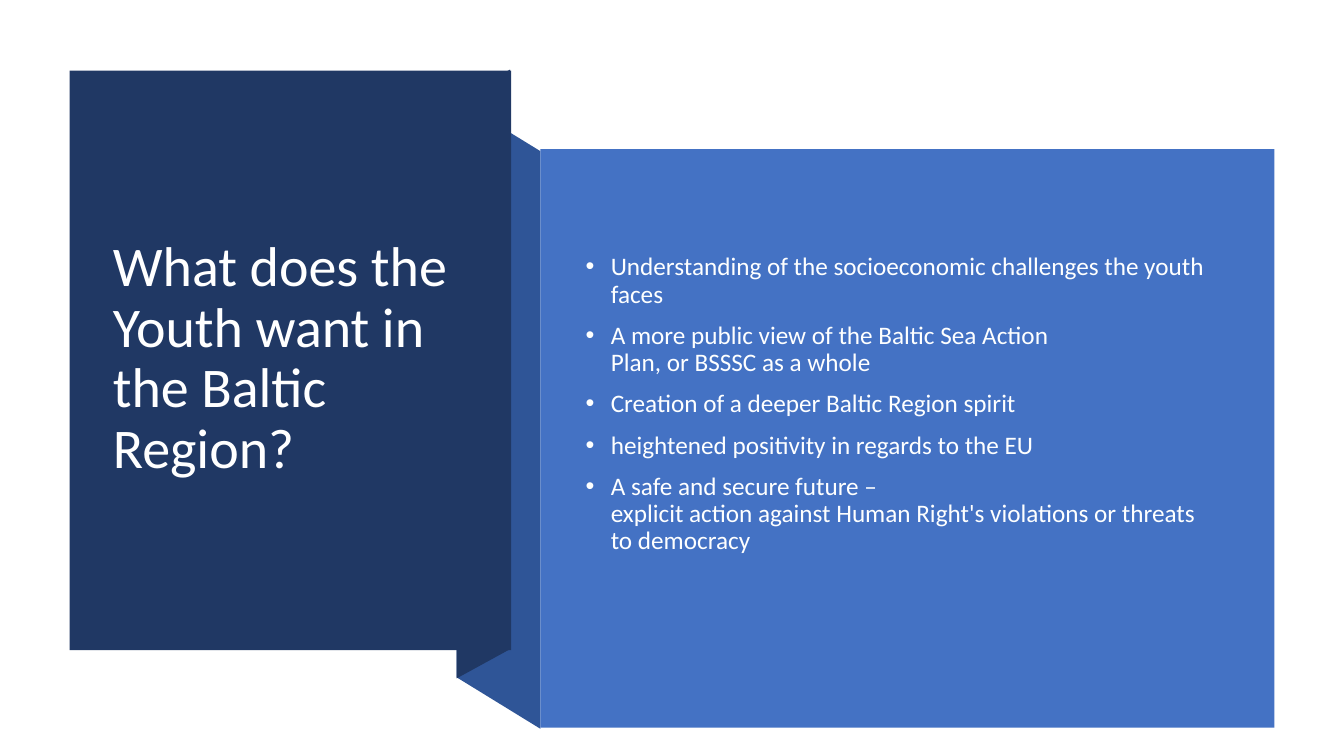
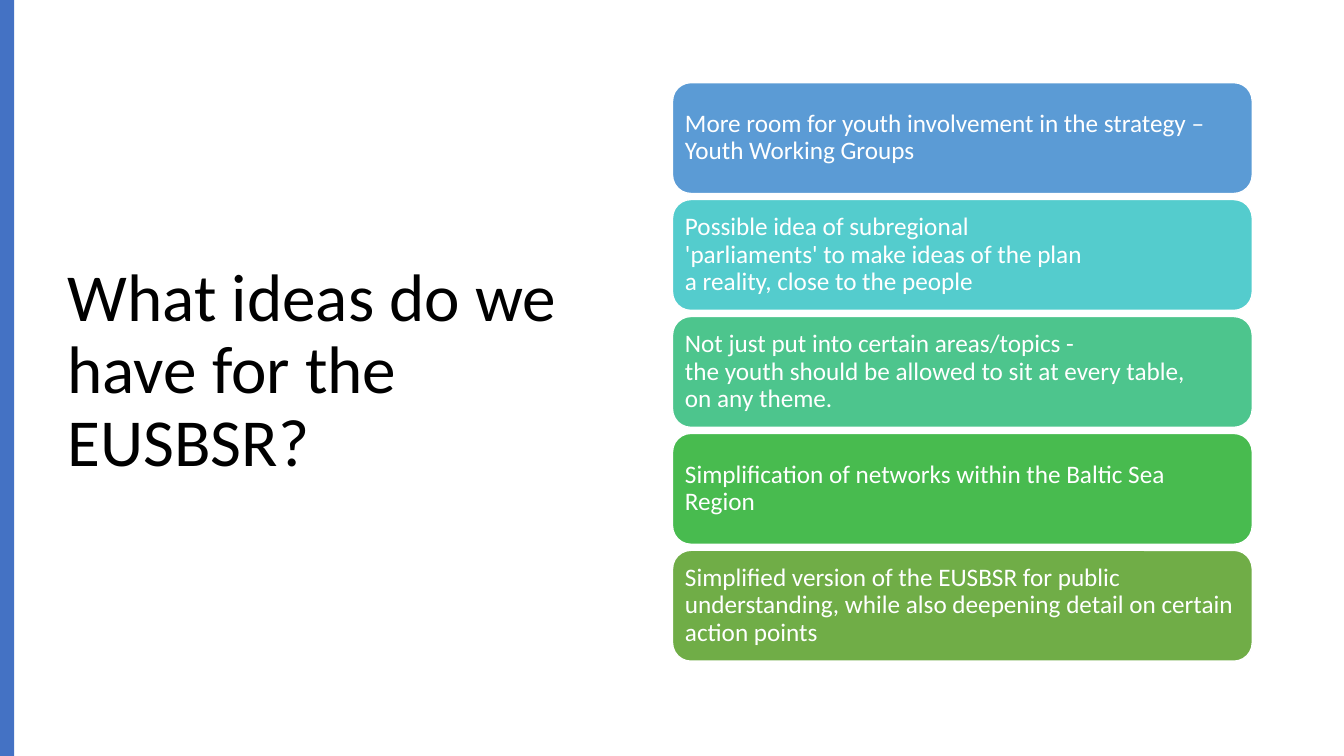
from dataclasses import dataclass
from typing import NamedTuple

from lxml.etree import SubElement
from pptx import Presentation
from pptx.dml.color import RGBColor as Rgb
from pptx.enum.shapes import MSO_SHAPE as Kind
from pptx.enum.text import MSO_ANCHOR as Anchor, MSO_AUTO_SIZE as Fit, PP_ALIGN as Align
from pptx.oxml.ns import qn
from pptx.shapes.autoshape import Shape
from pptx.slide import Slide
from pptx.text.text import TextFrame
from pptx.util import Inches, Pt


@dataclass(frozen=True)
class Theme:
    font: str = "Calibri"
    white: str = "FFFFFF"
    pale: str = "FEFFFF"
    black: str = "000000"
    navy: str = "203864"
    fold: str = "2F5597"
    blue: str = "4472C4"
    body: int = 18
    head: int = 40
    large: int = 48
    lead: float = 0.9


class Box(NamedTuple):
    left: float
    top: float
    width: float
    height: float


class Card(NamedTuple):
    fill: str
    text: str


THEME = Theme()

WANTS = [
    "Understanding of the socioeconomic challenges the youth faces",
    "A more public view of the Baltic Sea Action\nPlan, or BSSSC as a whole",
    "Creation of a deeper Baltic Region spirit",
    "heightened positivity in regards to the EU",
    "A safe and secure future –\nexplicit action against Human Right's violations or threats to democracy",
]

CARDS = [
    Card("5B9BD5", "More room for youth involvement in the strategy –\nYouth Working Groups"),
    Card("54CCCD", "Possible idea of subregional\n'parliaments' to make ideas of the plan\n"
                   "a reality, close to the people"),
    Card("4DC58D", "Not just put into certain areas/topics -\n"
                   "the youth should be allowed to sit at every table,\non any theme."),
    Card("48BB4F", "Simplification of networks within the Baltic Sea Region"),
    Card("70AD47", "Simplified version of the EUSBSR for public understanding, "
                   "while also deepening detail on certain action points"),
]


def write(frame: TextFrame, *texts: str, size: int = THEME.body, color: str = THEME.white,
          gap: int = 0, bullet: bool = False, inset: float = 0.1) -> None:
    """Fill a frame with one paragraph per text; a newline breaks the line."""
    frame.word_wrap = True
    frame.auto_size = Fit.NONE
    frame.vertical_anchor = Anchor.MIDDLE
    frame.margin_left = frame.margin_right = Inches(inset)
    frame.margin_top = frame.margin_bottom = Inches(0.05)
    for i, text in enumerate(texts):
        para = frame.add_paragraph() if i else frame.paragraphs[0]
        para.text = text
        para.alignment = Align.LEFT
        para.line_spacing = THEME.lead
        para.space_before = Pt(gap)
        for run in para.runs:
            run.font.name = THEME.font
            run.font.size = Pt(size)
            run.font.color.rgb = Rgb.from_string(color)
        if bullet:
            add_bullet(para._p.get_or_add_pPr())


def add_bullet(props) -> None:
    props.set("marL", str(Inches(0.25)))
    props.set("indent", str(-Inches(0.25)))
    SubElement(props, qn("a:buFont"), typeface="Arial")
    SubElement(props, qn("a:buChar"), char="•")


def paint(shape: Shape, fill: str, line: str = "") -> Shape:
    shape.shadow.inherit = False
    shape.fill.solid()
    shape.fill.fore_color.rgb = Rgb.from_string(fill)
    if line:
        shape.line.color.rgb = Rgb.from_string(line)
        shape.line.width = Pt(1)
    else:
        shape.line.fill.background()
    return shape


def add_box(slide: Slide, box: Box, fill: str, line: str = "",
            kind: Kind = Kind.RECTANGLE) -> Shape:
    return paint(slide.shapes.add_shape(kind, *map(Inches, box)), fill, line)


def add_fold(slide: Slide, points: list[tuple[float, float]], fill: str) -> None:
    first, *rest = [(Inches(x), Inches(y)) for x, y in points]
    pen = slide.shapes.build_freeform(*first)
    pen.add_line_segments(rest, close=True)
    paint(pen.convert_to_shape(), fill)


def set_title(slide: Slide, text: str, box: Box, size: int, color: str) -> None:
    """Place the title above all shapes drawn so far."""
    title = slide.shapes.title
    title.left, title.top, title.width, title.height = map(Inches, box)
    write(title.text_frame, text, size=size, color=color)
    slide.shapes.element.append(title.element)


def build_wants(slide: Slide) -> None:
    add_fold(slide, [(5.36, 7.23), (4.53, 6.72), (4.53, 0.99), (5.36, 1.5)], THEME.fold)
    add_fold(slide, [(5.06, 6.44), (4.53, 6.73), (4.53, 0.98), (5.06, 0.69)], THEME.navy)
    add_box(slide, Box(0.69, 0.7, 4.38, 5.75), THEME.navy)
    set_title(slide, "What does the Youth want in the Baltic Region?",
              Box(1.02, 1.07, 3.71, 4.99), THEME.head, THEME.white)
    add_box(slide, Box(5.36, 1.48, 7.28, 5.74), THEME.blue)
    body = slide.shapes.add_textbox(*map(Inches, Box(5.71, 1.88, 6.51, 4.27)))
    write(body.text_frame, *WANTS, color=THEME.pale, gap=10, bullet=True)


def build_ideas(slide: Slide) -> None:
    set_title(slide, "What ideas do we have for the EUSBSR?",
              Box(0.57, 0.68, 5.67, 6.02), THEME.large, THEME.black)
    add_box(slide, Box(0, 0, 0.14, 7.5), THEME.blue)
    top, step = 0.82, 1.16
    for i, card in enumerate(CARDS):
        shape = add_box(slide, Box(6.67, top + i * step, 5.75, 1.1), card.fill,
                        THEME.white, Kind.ROUNDED_RECTANGLE)
        # The rounded corner adds about 0.05 to the inset.
        write(shape.text_frame, card.text, inset=0.07)


def main() -> None:
    deck = Presentation()
    deck.slide_width, deck.slide_height = Inches(13.33), Inches(7.5)
    layout = deck.slide_layouts.get_by_name("Title Only")
    for build in (build_wants, build_ideas):
        build(deck.slides.add_slide(layout))
    deck.save("out.pptx")


if __name__ == "__main__":
    main()
